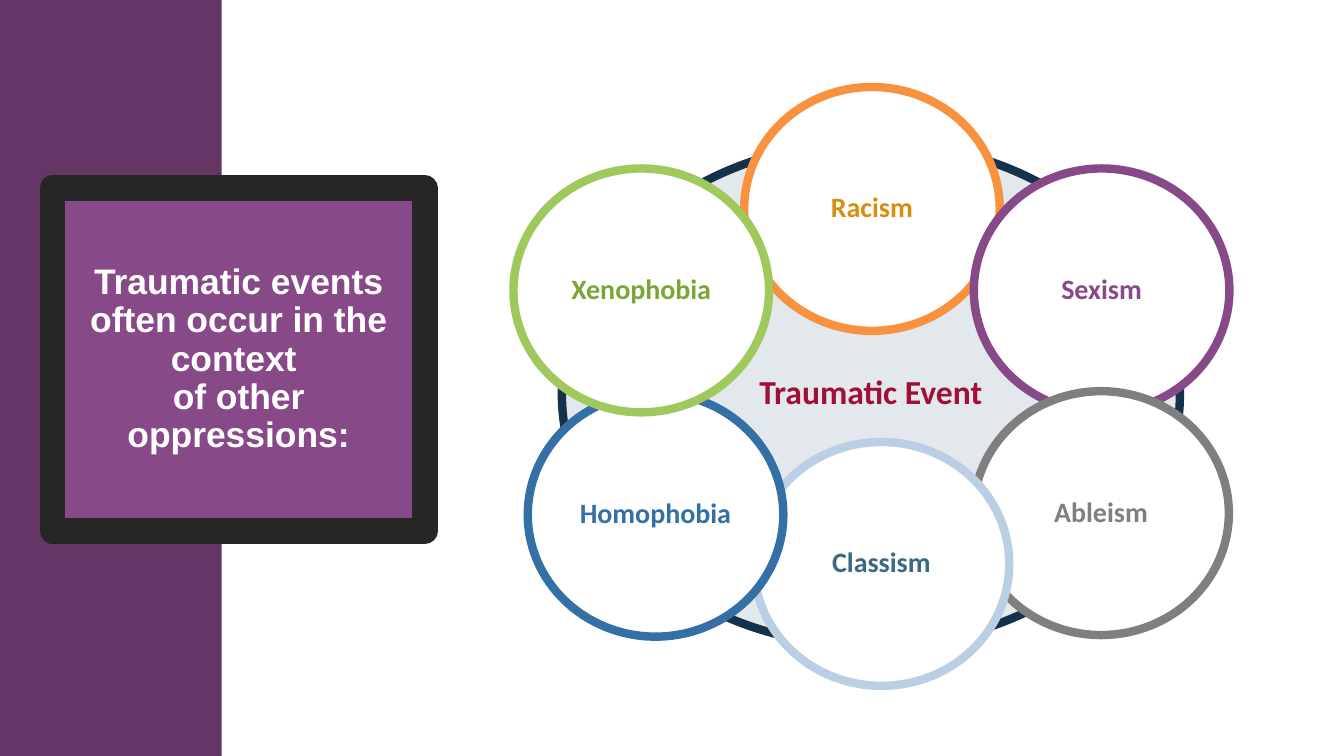
from dataclasses import dataclass
from typing import Optional

from pptx import Presentation
from pptx.dml.color import RGBColor
from pptx.enum.shapes import MSO_SHAPE
from pptx.enum.text import MSO_ANCHOR, PP_ALIGN
from pptx.util import Cm, Pt

RECTANGLE = MSO_SHAPE.RECTANGLE
OVAL = MSO_SHAPE.OVAL
MIDDLE = MSO_ANCHOR.MIDDLE
CENTER = PP_ALIGN.CENTER


@dataclass(frozen=True)
class Theme:
    band: str = "653665"
    purple: str = "874987"
    frame: str = "262626"
    white: str = "FFFFFF"
    hub_fill: str = "E2E8EB"
    hub_ring: str = "14324A"
    hub_text: str = "A00F35"
    heading_font: str = "Arial"
    label_font: str = "Calibri"
    heading_size: float = 19
    hub_size: float = 18
    label_size: float = 15
    frame_width: float = 13.75
    ring_width: float = 4.5


@dataclass(frozen=True)
class Label:
    text: str
    font: str
    size: float
    color: str
    inset_x: float = 0.05
    inset_y: float = 0.05


@dataclass(frozen=True)
class Panel:
    kind: int
    center_x: float
    center_y: float
    width: float
    height: float
    fill: str
    outline: Optional[str] = None
    outline_width: float = 0
    label: Optional[Label] = None


@dataclass(frozen=True)
class Oppression:
    name: str
    center_x: float
    center_y: float
    ring: str
    text_color: str


THEME = Theme()
SLIDE_WIDTH, SLIDE_HEIGHT = 25.4, 14.29
BAND_WIDTH = 4.19
CIRCLE_WIDTH, CIRCLE_HEIGHT = 4.83, 4.61
HEADING = "Traumatic events often occur in the context \nof other oppressions:"

OPPRESSIONS = [
    Oppression("Racism", 16.48, 3.95, "F9923E", "D88E0C"),
    Oppression("Sexism", 20.82, 5.49, THEME.purple, THEME.purple),
    Oppression("Ableism", 20.81, 9.7, "7F7F7F", "7F7F7F"),
    Oppression("Classism", 16.66, 10.66, "BACFE4", "3A6984"),
    Oppression("Homophobia", 12.39, 9.73, "346FA5", "346FA5"),
    Oppression("Xenophobia", 12.12, 5.49, "9FC95D", "7AA537"),
]


def apply_format(target, values: dict) -> None:
    for attribute, value in values.items():
        setattr(target, attribute, value)


def write_label(frame, label: Label) -> None:
    apply_format(frame, {
        "word_wrap": True,
        "vertical_anchor": MIDDLE,
        "margin_left": Cm(label.inset_x),
        "margin_right": Cm(label.inset_x),
        "margin_top": Cm(label.inset_y),
        "margin_bottom": Cm(label.inset_y),
    })
    paragraph = frame.paragraphs[0]
    apply_format(paragraph, {"alignment": CENTER, "line_spacing": 0.9})
    for index, line in enumerate(label.text.split("\n")):
        if index:
            paragraph.add_line_break()
        run = paragraph.add_run()
        run.text = line
        apply_format(run.font, {"name": label.font, "size": Pt(label.size), "bold": True})
        run.font.color.rgb = RGBColor.from_string(label.color)


def draw_panel(slide, panel: Panel) -> None:
    shape = slide.shapes.add_shape(
        panel.kind,
        Cm(panel.center_x - panel.width / 2),
        Cm(panel.center_y - panel.height / 2),
        Cm(panel.width),
        Cm(panel.height),
    )
    shape.shadow.inherit = False
    shape.fill.solid()
    shape.fill.fore_color.rgb = RGBColor.from_string(panel.fill)
    if panel.outline:
        shape.line.color.rgb = RGBColor.from_string(panel.outline)
        shape.line.width = Pt(panel.outline_width)
    else:
        shape.line.fill.background()
    if panel.label:
        write_label(shape.text_frame, panel.label)


def oppression_panel(oppression: Oppression) -> Panel:
    label = Label(oppression.name, THEME.label_font, THEME.label_size, oppression.text_color)
    return Panel(OVAL, oppression.center_x, oppression.center_y, CIRCLE_WIDTH, CIRCLE_HEIGHT,
                 THEME.white, oppression.ring, THEME.ring_width, label)


def main() -> None:
    presentation = Presentation()
    presentation.slide_width = Cm(SLIDE_WIDTH)
    presentation.slide_height = Cm(SLIDE_HEIGHT)
    slide = presentation.slides.add_slide(presentation.slide_layouts[6])

    heading = Label(HEADING, THEME.heading_font, THEME.heading_size, THEME.white, 0.18, 0.1)
    hub = Label("Traumatic Event", THEME.label_font, THEME.hub_size, THEME.hub_text)
    panels = [
        Panel(RECTANGLE, BAND_WIDTH / 2, SLIDE_HEIGHT / 2, BAND_WIDTH, SLIDE_HEIGHT, THEME.band),
        Panel(RECTANGLE, 4.51, 6.8, 7.04, 6.48, THEME.purple,
              THEME.frame, THEME.frame_width, heading),
        Panel(OVAL, 16.46, 7.45, 11.68, 9.53, THEME.hub_fill,
              THEME.hub_ring, THEME.ring_width, hub),
        *map(oppression_panel, OPPRESSIONS),
    ]
    for panel in panels:
        draw_panel(slide, panel)

    presentation.save("out.pptx")


if __name__ == "__main__":
    main()
